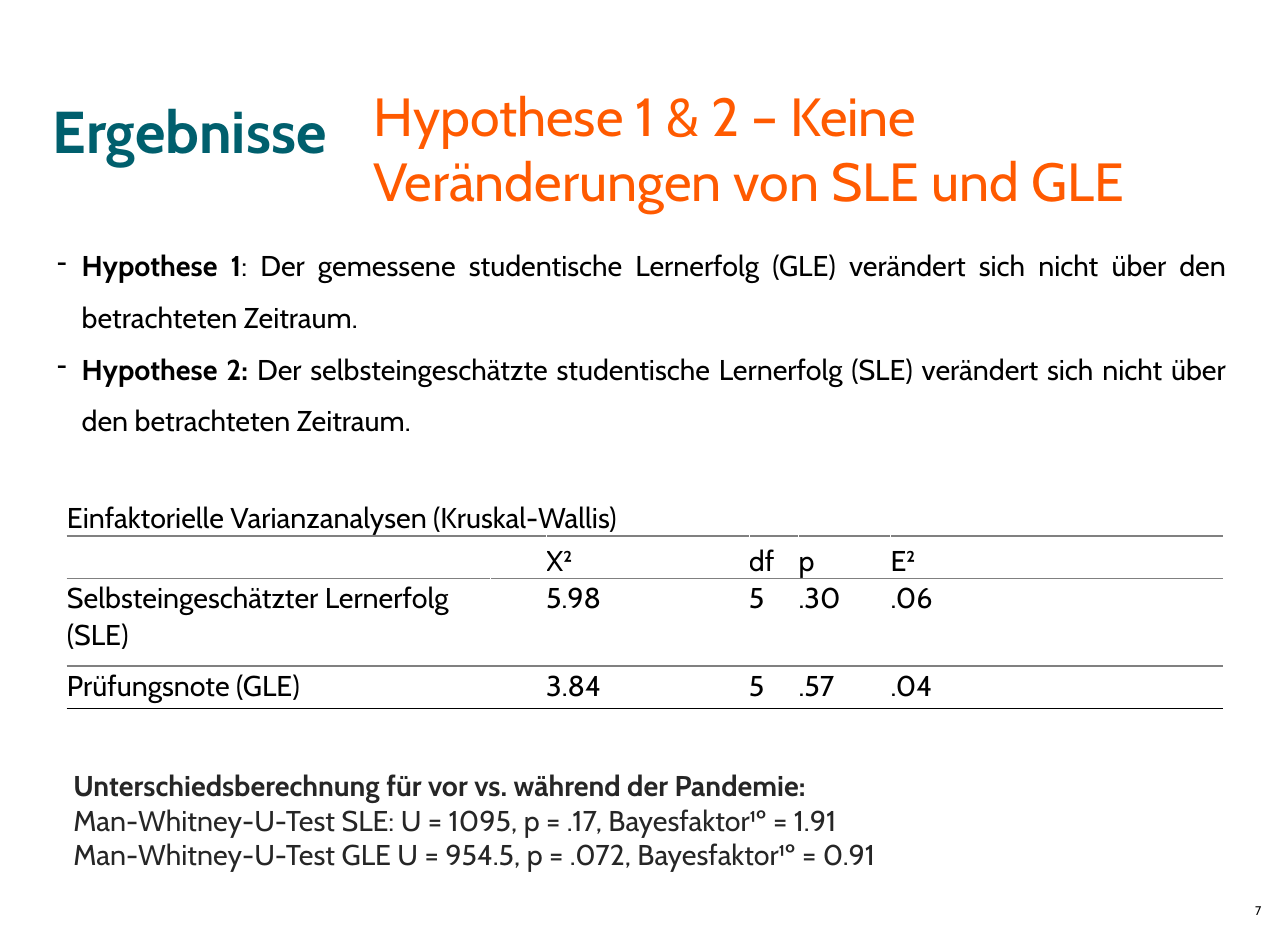
from dataclasses import dataclass, field

import pptx
import pptx.dml.color
import pptx.enum.text
import pptx.oxml
import pptx.oxml.ns
import pptx.util

RGBColor = pptx.dml.color.RGBColor
Pt = pptx.util.Pt

TEAL = RGBColor(0x00, 0x5F, 0x6D)
ORANGE = RGBColor(0xFF, 0x5A, 0x00)
BLACK = RGBColor(0x00, 0x00, 0x00)
DARK = RGBColor(0x26, 0x26, 0x26)
GREY = RGBColor(0x80, 0x80, 0x80)

WIDTH, HEIGHT = pptx.util.Inches(20), pptx.util.Inches(14.58)
FONT = "Cabin"
BODY = 32
MARGINS = ("margin_left", "margin_top", "margin_right", "margin_bottom")
HYPOTHESIS_FORMAT = {"alignment": pptx.enum.text.PP_ALIGN.JUSTIFY, "line_spacing": 1.5}
CELL_FORMAT = {"line_spacing": 1.07, "space_after": Pt(6)}


@dataclass
class TextBlock:
    """A text box; its place is in percent of the slide's width and height."""
    left: float
    top: float
    width: float
    height: float
    paragraphs: list  # each a list of (text, bold) runs
    size: float
    color: RGBColor
    has_inset: bool = False
    bullet: str = ""
    indent: float = 0  # inches
    para_format: dict = field(default_factory=dict)


@dataclass
class Rule:
    """A line below a table row."""
    row: int
    color: RGBColor
    weight: float


def x(percent: float) -> int:
    return round(WIDTH * percent / 100)


def y(percent: float) -> int:
    return round(HEIGHT * percent / 100)


def set_all(target, values: dict) -> None:
    for name, value in values.items():
        setattr(target, name, value)


def add_run(p, text: str, bold: bool, size: float, color: RGBColor) -> None:
    r = p.add_run()
    r.text = text
    set_all(r.font, {"name": FONT, "size": Pt(size), "bold": bold})
    r.font.color.rgb = color


def set_indent(p, indent: float, bullet: str) -> None:
    pPr = p._p.get_or_add_pPr()
    margin = pptx.util.Inches(indent)
    pPr.set("marL", str(margin))
    if bullet:
        pPr.set("indent", str(-margin))
        bu = pptx.oxml.parse_xml(
            f'<a:buChar {pptx.oxml.ns.nsdecls("a")} char="{bullet}"/>')
        pPr.append(bu)


def draw_text(slide, block: TextBlock) -> None:
    sp = slide.shapes.add_textbox(x(block.left), y(block.top),
                                  x(block.width), y(block.height))
    tf = sp.text_frame
    tf.word_wrap = True
    if not block.has_inset:
        set_all(tf, dict.fromkeys(MARGINS, 0))
    for i, runs in enumerate(block.paragraphs):
        p = tf.add_paragraph() if i else tf.paragraphs[0]
        set_indent(p, block.indent, block.bullet)
        set_all(p, block.para_format)
        for text, bold in runs:
            add_run(p, text, bold, block.size, block.color)


def draw_edge(cell, side: str, rule: Rule) -> None:
    ln = pptx.oxml.parse_xml(
        f'<a:{side} {pptx.oxml.ns.nsdecls("a")} w="{Pt(rule.weight)}">'
        f'<a:solidFill><a:srgbClr val="{rule.color}"/></a:solidFill></a:{side}>')
    tcPr = cell._tc.get_or_add_tcPr()
    tcPr.insert(len(tcPr.findall(pptx.oxml.ns.qn("a:lnT"))), ln)


def draw_table(slide, left: float, top: float, columns: list, rows: list,
               content: list, rules: list) -> None:
    table = slide.shapes.add_table(len(rows), len(columns), x(left), y(top),
                                   x(sum(columns)), y(sum(rows))).table
    set_all(table, {"first_row": False, "horz_banding": False})
    for column, share in zip(table.columns, columns):
        column.width = x(share)
    for row, share in zip(table.rows, rows):
        row.height = y(share)

    # Cell text
    for i, texts in enumerate(content):
        anchor = pptx.enum.text.MSO_ANCHOR
        for j, text in enumerate(texts):
            cell = table.cell(i, j)
            cell.fill.background()
            set_all(cell, dict.fromkeys(MARGINS, 0))
            cell.vertical_anchor = anchor.BOTTOM if i < 2 else anchor.TOP
            if text:
                p = cell.text_frame.paragraphs[0]
                set_all(p, CELL_FORMAT)
                add_run(p, text, False, BODY, BLACK)

    # Horizontal rules, shared by the rows above and below
    for rule in rules:
        for j in range(len(columns)):
            if rule.row + 1 < len(rows):
                draw_edge(table.cell(rule.row + 1, j), "lnT", rule)
            draw_edge(table.cell(rule.row, j), "lnB", rule)

    # Caption across the table, empty heading over two columns
    table.cell(0, 0).merge(table.cell(0, len(columns) - 1))
    table.cell(1, 0).merge(table.cell(1, 1))


BLOCKS = [
    # Page number
    TextBlock(96.8, 96.16, 1.3, 1.51, [[("7", False)]], 14, BLACK, indent=0.13),
    # Title and subtitle
    TextBlock(4.1, 10.08, 91.8, 7.61, [[("Ergebnisse", True)]], 66, TEAL),
    TextBlock(29, 8.85, 63.15, 13.85,
              [[("Hypothese 1 & 2 – Keine Veränderungen von SLE und GLE", False)]],
              60, ORANGE),
    # Hypotheses
    TextBlock(3.95, 24.28, 91.8, 22.22, [
        [("Hypothese 1", True),
         (": Der gemessene studentische Lernerfolg (GLE) verändert sich nicht "
          "über den betrachteten Zeitraum.", False)],
        [("Hypothese 2: ", True),
         ("Der selbsteingeschätzte studentische Lernerfolg (SLE) verändert sich "
          "nicht über den betrachteten Zeitraum.", False)],
    ], BODY, BLACK, True, "-", 0.38, HYPOTHESIS_FORMAT),
    # Pandemic comparison
    TextBlock(5.2, 81.48, 86.9, 11.8, [
        [("Unterschiedsberechnung für vor vs. während der Pandemie:", True)],
        [("Man-Whitney-U-Test SLE: U = 1095, p = .17, Bayesfaktor¹º = 1.91", False)],
        [("Man-Whitney-U-Test GLE U = 954.5, p = .072, Bayesfaktor¹º = 0.91", False)],
    ], BODY, DARK, True),
]

TABLE_COLUMNS = [32.9, 4.3, 15.75, 3.85, 7.15, 25.75]
TABLE_ROWS = [4.53, 4.53, 9.33, 4.53]
TABLE_CONTENT = [
    ["Einfaktorielle Varianzanalysen (Kruskal-Wallis)", "", "", "", "", ""],
    ["", "", "X²", "df", "p", "E²"],
    ["Selbsteingeschätzter Lernerfolg (SLE)", "", "5.98", "5", ".30", ".06"],
    ["Prüfungsnote (GLE)", "", "3.84", "5", ".57", ".04"],
]
TABLE_RULES = [Rule(row, GREY, 2.25) for row in range(3)] + [Rule(3, BLACK, 1)]


def main() -> None:
    prs = pptx.Presentation()
    set_all(prs, {"slide_width": WIDTH, "slide_height": HEIGHT})
    slide = prs.slides.add_slide(prs.slide_layouts[6])
    for block in BLOCKS:
        draw_text(slide, block)
    draw_table(slide, 5.2, 52.54, TABLE_COLUMNS, TABLE_ROWS,
               TABLE_CONTENT, TABLE_RULES)
    prs.save("out.pptx")


if __name__ == "__main__":
    main()
